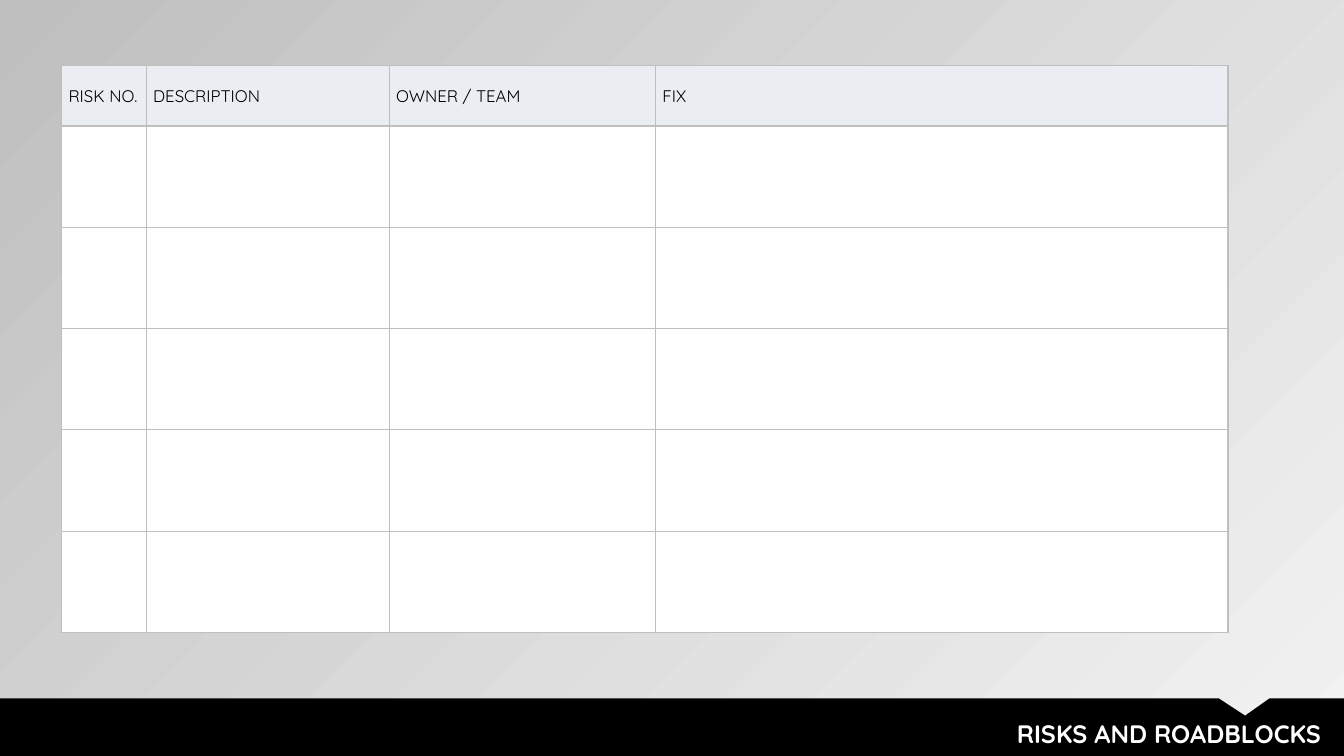
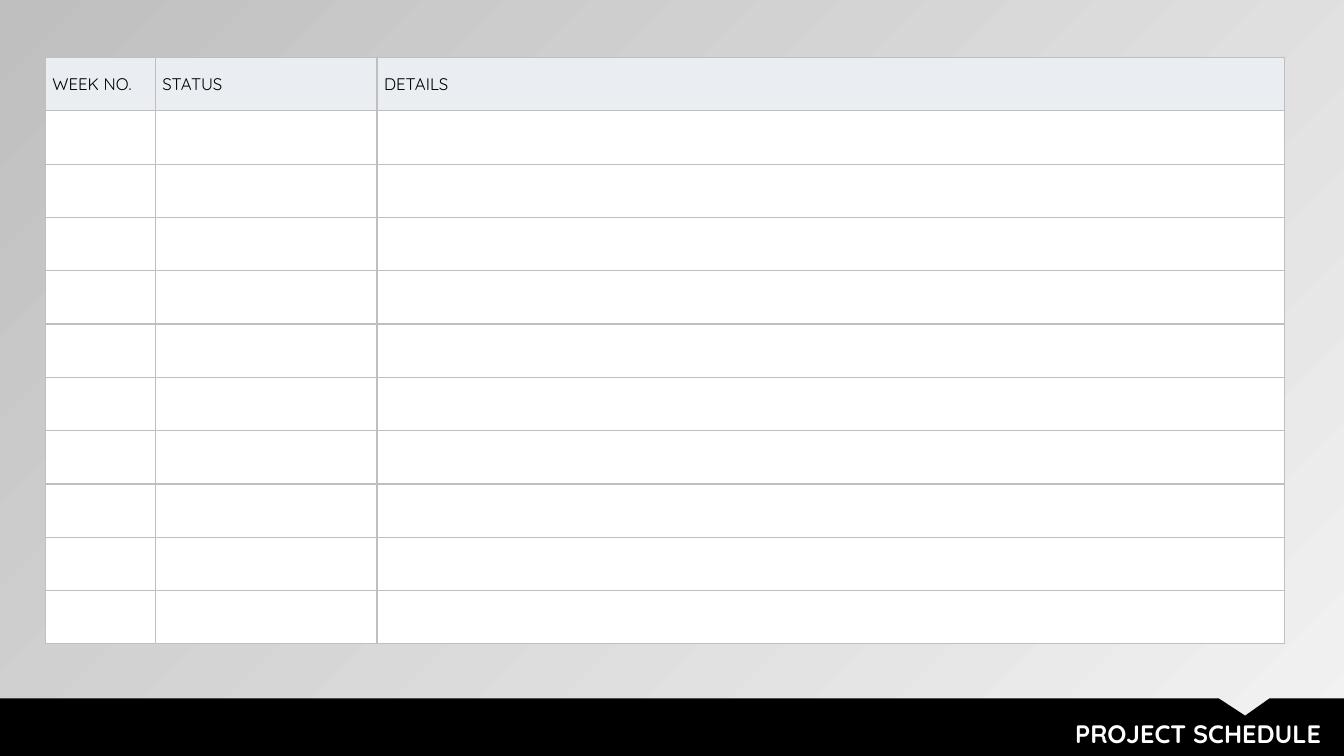
from dataclasses import dataclass

from lxml.etree import SubElement
from pptx import Presentation
from pptx.dml.color import RGBColor
from pptx.enum.text import MSO_ANCHOR, PP_ALIGN
from pptx.oxml.ns import qn
from pptx.util import Inches, Pt


@dataclass(frozen=True)
class Theme:
    font: str = "Quicksand"
    title_size: int = 18
    header_size: int = 12
    border_width: int = 1
    light: str = "F2F2F2"
    gray: str = "BFBFBF"
    header: str = "EAEEF3"
    white: str = "FFFFFF"
    black: str = "000000"


THEME = Theme()
WIDTH, HEIGHT = 13.33, 7.5

# Content: lengths in inches
SLIDES = [
    {
        "title": "RISKS AND ROADBLOCKS",
        "left": 0.61, "top": 0.65,
        "columns": [("RISK NO.", 0.84), ("DESCRIPTION", 2.41),
                    ("OWNER / TEAM", 2.64), ("FIX", 5.68)],
        "header_height": 0.6, "row_height": 1.005, "empty_rows": 5,
    },
    {
        "title": "PROJECT SCHEDULE",
        "left": 0.45, "top": 0.57,
        "columns": [("WEEK NO.", 1.09), ("STATUS", 2.2), ("DETAILS", 9)],
        "header_height": 0.53, "row_height": 0.529, "empty_rows": 10,
    },
]

# Footer band with a notch in its upper edge
BAND_TOP = 6.93
BAND_OUTLINE = [(0, BAND_TOP), (12.09, BAND_TOP), (12.35, 7.1), (12.59, BAND_TOP),
                (WIDTH, BAND_TOP), (WIDTH, HEIGHT), (0, HEIGHT)]


def color(value):
    return RGBColor.from_string(value)


def add_span(para, text, size, ink, bold=False):
    span = para.add_run()
    span.text = text
    span.font.name = THEME.font
    span.font.size = Pt(size)
    span.font.bold = bold
    span.font.color.rgb = color(ink)


def set_background(master):
    fill = master.background.fill
    fill.gradient()
    fill.gradient_angle = 135
    for stop, shade in zip(fill.gradient_stops, (THEME.light, THEME.gray)):
        stop.color.rgb = color(shade)


def add_footer(page, title):
    points = [(Inches(x), Inches(y)) for x, y in BAND_OUTLINE]
    builder = page.shapes.build_freeform(*points[0])
    builder.add_line_segments(points[1:], close=True)
    band = builder.convert_to_shape()
    band.shadow.inherit = False
    band.fill.solid()
    band.fill.fore_color.rgb = color(THEME.black)
    band.line.fill.background()

    box = page.shapes.add_textbox(Inches(4.14), Inches(7.08), Inches(9.06), Inches(0.4))
    box.text_frame.word_wrap = True
    para = box.text_frame.paragraphs[0]
    para.alignment = PP_ALIGN.RIGHT
    add_span(para, title, THEME.title_size, THEME.white, bold=True)


def style_cell(cell, fill):
    # Borders come before the fill in the cell properties
    properties = cell._tc.get_or_add_tcPr()
    for side in ("a:lnL", "a:lnR", "a:lnT", "a:lnB"):
        line = SubElement(properties, qn(side), w=str(Pt(THEME.border_width)))
        solid = SubElement(line, qn("a:solidFill"))
        SubElement(solid, qn("a:srgbClr"), val=THEME.gray)
    cell.fill.solid()
    cell.fill.fore_color.rgb = color(fill)
    cell.vertical_anchor = MSO_ANCHOR.MIDDLE
    cell.margin_left = cell.margin_right = Inches(0.07)
    cell.margin_top = cell.margin_bottom = 0


def add_grid(page, content):
    columns = content["columns"]
    heights = [content["header_height"]] + [content["row_height"]] * content["empty_rows"]
    frame = page.shapes.add_table(
        len(heights), len(columns), Inches(content["left"]), Inches(content["top"]),
        Inches(sum(width for _, width in columns)), Inches(sum(heights)))
    table = frame.table
    table.first_row = table.horz_banding = False
    for row, height in zip(table.rows, heights):
        row.height = Inches(height)
    for index, (label, width) in enumerate(columns):
        table.columns[index].width = Inches(width)
        for row_index in range(len(heights)):
            style_cell(table.cell(row_index, index),
                       THEME.white if row_index else THEME.header)
        para = table.cell(0, index).text_frame.paragraphs[0]
        add_span(para, label, THEME.header_size, THEME.black)


def main():
    deck = Presentation()
    deck.slide_width, deck.slide_height = Inches(WIDTH), Inches(HEIGHT)
    set_background(deck.slide_master)
    for content in SLIDES:
        page = deck.slides.add_slide(deck.slide_layouts[6])
        add_grid(page, content)
        add_footer(page, content["title"])
    deck.save("out.pptx")


if __name__ == "__main__":
    main()
